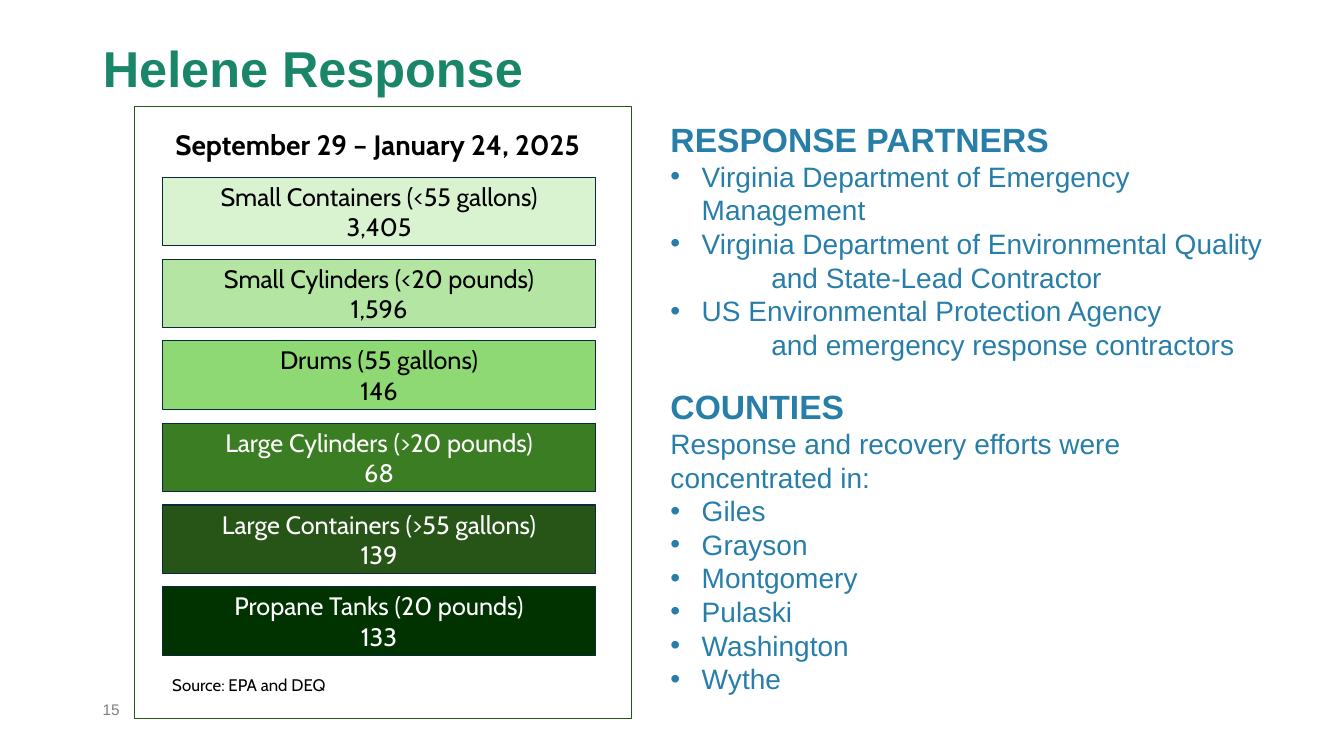
import dataclasses

import pptx
import pptx.dml.color
import pptx.enum.shapes
import pptx.enum.text
import pptx.oxml
import pptx.oxml.ns
import pptx.util

PX = 9144
ALIGN = pptx.enum.text.PP_ALIGN
ANCHOR = pptx.enum.text.MSO_ANCHOR


@dataclasses.dataclass(frozen=True)
class Theme:
    """Colours, fonts and type sizes of the slide."""
    sans: str = "Arial"
    display: str = "Cabin"
    title: str = "198569"
    body: str = "277EA9"
    muted: str = "808080"
    dark: str = "000000"
    light: str = "FFFFFF"
    box_line: str = "092A39"
    frame_line: str = "275417"
    title_size: int = 36
    heading_size: int = 24
    body_size: int = 20
    box_size: int = 18
    source_size: int = 12
    number_size: int = 11


THEME = Theme()
SANS_BODY = dict(name=THEME.sans, size=THEME.body_size, color=THEME.body, bold=False)
SANS_HEADING = dict(SANS_BODY, size=THEME.heading_size, bold=True)

WASTE = [
    ("Small Containers (<55 gallons)", "3,405", "D9F2D0", THEME.dark),
    ("Small Cylinders (<20 pounds)", "1,596", "B4E5A2", THEME.dark),
    ("Drums (55 gallons)", "146", "8ED973", THEME.dark),
    ("Large Cylinders (>20 pounds)", "68", "3B7D23", THEME.light),
    ("Large Containers (>55 gallons)", "139", "275417", THEME.light),
    ("Propane Tanks (20 pounds)", "133", "003300", THEME.light),
]
PARTNERS = [
    ("heading", "RESPONSE PARTNERS"),
    ("bullet", "Virginia Department of Emergency Management"),
    ("bullet", "Virginia Department of Environmental Quality"),
    ("detail", "and State-Lead Contractor"),
    ("bullet", "US Environmental Protection Agency"),
    ("detail", "and emergency response contractors"),
]
COUNTIES = [
    ("heading", "COUNTIES"),
    ("plain", "Response and recovery efforts were concentrated in:"),
] + [("bullet", county) for county in
     ("Giles", "Grayson", "Montgomery", "Pulaski", "Washington", "Wythe")]


def rgb(value):
    """Turn a hex string into a colour."""
    return pptx.dml.color.RGBColor.from_string(value)


def place(shape, box):
    """Move and size a shape from lengths in px."""
    for name, value in zip(("left", "top", "width", "height"), box):
        setattr(shape, name, value * PX)


def style(font, size, color, **values):
    """Apply a dict of format values to a font."""
    font.size = pptx.util.Pt(size)
    font.color.rgb = rgb(color)
    for name, value in values.items():
        setattr(font, name, value)


def write(tf, lines, fmt, **layout):
    """Fill a text frame with paragraphs of one format."""
    for i, line in enumerate(lines):
        p = tf.add_paragraph() if i else tf.paragraphs[0]
        for name, value in layout.items():
            setattr(p, name, value)
        r = p.add_run()
        r.text = line
        style(r.font, **fmt)


def add_label(shapes, box, text, fmt, wrap=False):
    """Add a text box with one line."""
    s = shapes.add_textbox(*(v * PX for v in box))
    s.text_frame.word_wrap = wrap
    write(s.text_frame, [text], fmt)


def add_rect(shapes, box, fill, line, width):
    """Add an outlined rectangle, hollow when fill is None."""
    s = shapes.add_shape(pptx.enum.shapes.MSO_SHAPE.RECTANGLE, *(v * PX for v in box))
    s.shadow.inherit = False
    if fill:
        s.fill.solid()
        s.fill.fore_color.rgb = rgb(fill)
    else:
        s.fill.background()
    s.line.color.rgb = rgb(line)
    s.line.width = pptx.util.Pt(width)
    return s


def set_bullet(p, kind):
    """Set the indents and bullet of a list paragraph."""
    margin, indent = {"bullet": (31, -31), "detail": (100, 0)}.get(kind, (0, 0))
    pPr = p._p.get_or_add_pPr()
    pPr.set("marL", str(margin * PX))
    pPr.set("indent", str(indent * PX))
    tag = "a:buChar" if kind == "bullet" else "a:buNone"
    bullet = pptx.oxml.parse_xml(f"<{tag} {pptx.oxml.ns.nsdecls('a')}/>")
    if kind == "bullet":
        bullet.set("char", "•")
    pPr.append(bullet)


def fill_list(ph, box, items):
    """Place a body placeholder and write its list."""
    place(ph, box)
    tf = ph.text_frame
    tf.auto_size = pptx.enum.text.MSO_AUTO_SIZE.NONE
    for i, (kind, text) in enumerate(items):
        p = tf.add_paragraph() if i else tf.paragraphs[0]
        set_bullet(p, kind)
        p.space_before = pptx.util.Pt(0)
        r = p.add_run()
        r.text = text
        style(r.font, **(SANS_HEADING if kind == "heading" else SANS_BODY))


def add_waste_panel(shapes):
    """Add the framed panel of container counts."""
    cabin = dict(name=THEME.display, color=THEME.dark)
    for i, (label, count, fill, color) in enumerate(WASTE):
        s = add_rect(shapes, (161, 176 + round(i * 81.2), 430, 68), fill, THEME.box_line, 0.75)
        s.text_frame.vertical_anchor = ANCHOR.MIDDLE
        write(s.text_frame, [label, count], dict(cabin, size=THEME.box_size, color=color),
              alignment=ALIGN.CENTER)
    add_label(shapes, (164, 122, 430, 44), "September 29 – January 24, 2025",
              dict(cabin, size=THEME.body_size, bold=True))
    add_label(shapes, (161, 664, 179, 30), "Source: EPA and DEQ",
              dict(cabin, size=THEME.source_size))
    add_rect(shapes, (133, 106, 493, 607), None, THEME.frame_line, 0.5)


def main():
    """Build the slide and save it."""
    prs = pptx.Presentation()
    prs.slide_width, prs.slide_height = 1333 * PX, 750 * PX
    slide = prs.slides.add_slide(prs.slide_layouts.get_by_name("Two Content"))
    title, partners, counties = slide.placeholders
    place(title, (92, -2, 1150, 145))
    title.text_frame.vertical_anchor = ANCHOR.MIDDLE
    write(title.text_frame, ["Helene Response"],
          dict(name=THEME.sans, size=THEME.title_size, color=THEME.title, bold=True),
          alignment=ALIGN.LEFT, line_spacing=0.9)
    add_label(slide.shapes, (92, 690, 1150, 45), "15",
              dict(name=THEME.sans, size=THEME.number_size, color=THEME.muted), wrap=True)
    fill_list(partners, (655, 113, 640, 252), PARTNERS)
    fill_list(counties, (655, 378, 616, 320), COUNTIES)
    add_waste_panel(slide.shapes.add_group_shape().shapes)
    prs.save("out.pptx")


if __name__ == "__main__":
    main()
